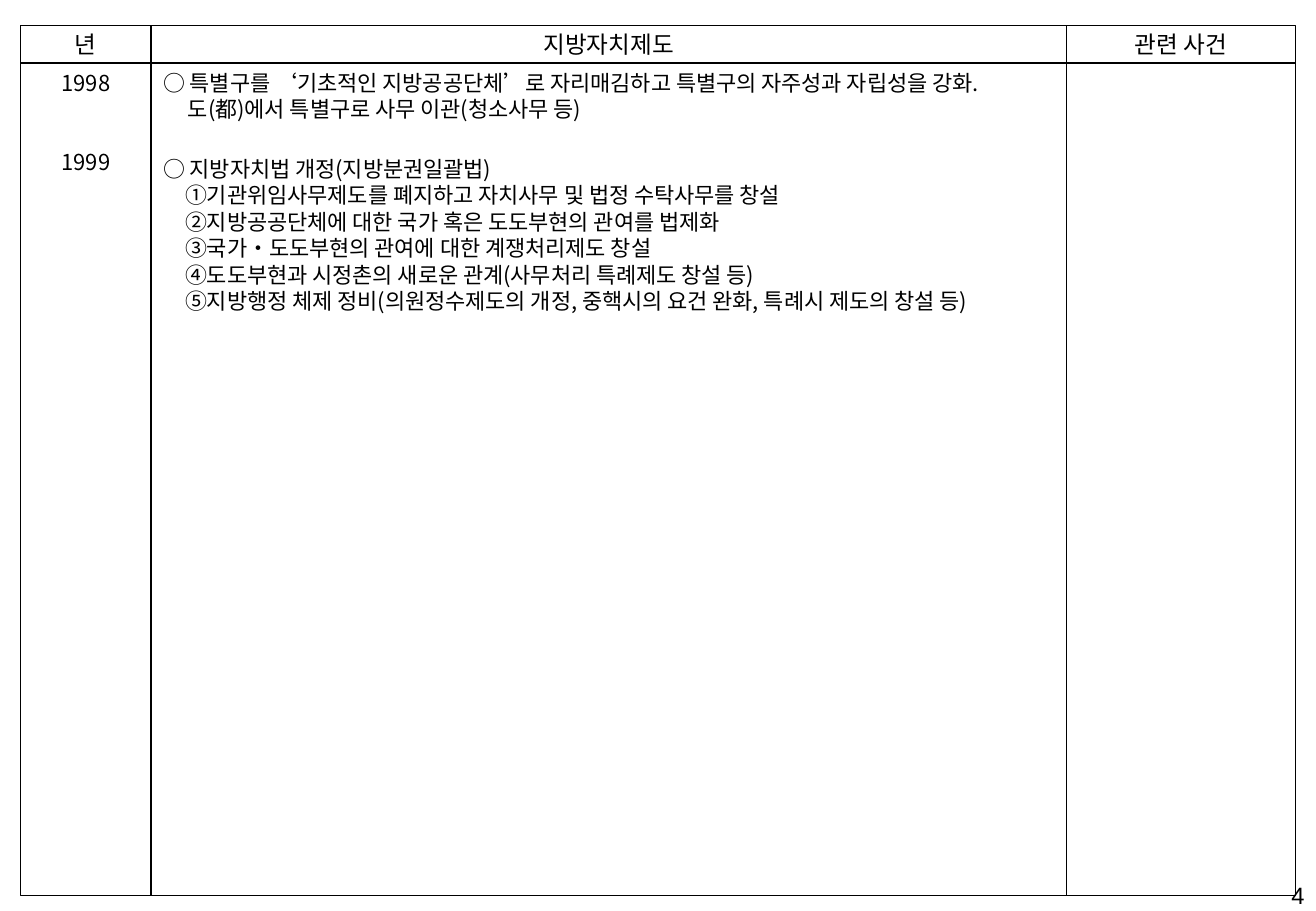
from lxml.etree import SubElement
from pptx import Presentation
from pptx.dml.color import RGBColor
from pptx.enum.shapes import MSO_SHAPE
from pptx.enum.text import MSO_ANCHOR, PP_ALIGN
from pptx.oxml.ns import qn
from pptx.util import Cm, Pt

NOTO = "Noto Sans CJK KR"
INK = "000000"
LEAD = 15.7
LEFT = 0.43
TOP, HEAD, BODY = 0.54, 0.78, 17.4

COLS = [
    (2.73, "년", "Calibri"),
    (19.13, "지방자치제도", "Calibri"),
    (4.8, "관련 사건", NOTO),
]
YEARS = [("1998", 0, 0), ("1999", 0, 2 * LEAD)]
WARDS = [
    ("○ 특별구를 ‘기초적인 지방공공단체’로 자리매김하고 특별구의 자주성과 자립성을 강화.", 0, 0),
    ("도(都)에서 특별구로 사무 이관(청소사무 등)", 0.52, 0),
]
REFORM = [("○ 지방자치법 개정(지방분권일괄법)", 0, 0)] + [
    (item, 0.46, 0)
    for item in (
        "①기관위임사무제도를 폐지하고 자치사무 및 법정 수탁사무를 창설",
        "②지방공공단체에 대한 국가 혹은 도도부현의 관여를 법제화",
        "③국가・도도부현의 관여에 대한 계쟁처리제도 창설",
        "④도도부현과 시정촌의 새로운 관계(사무처리 특례제도 창설 등)",
        "⑤지방행정 체제 정비(의원정수제도의 개정, 중핵시의 요건 완화, 특례시 제도의 창설 등)",
    )
]


def paint(target, code):
    """Set a solid colour from a hex string."""
    target.rgb = RGBColor.from_string(code)


def style(para, size, face, align):
    """Set the font and alignment of a paragraph."""
    para.alignment = align
    font = para.font
    font.size = Pt(size)
    font.name = face
    paint(font.color, INK)
    SubElement(font._rPr, qn("a:ea")).set("typeface", NOTO)


def label(shape, text, size, face, align):
    """Write one line, centred in height."""
    frame = shape.text_frame
    frame.word_wrap = True
    frame.vertical_anchor = MSO_ANCHOR.MIDDLE
    frame.text = text
    style(frame.paragraphs[0], size, face, align)


def prose(shape, lines, align=PP_ALIGN.LEFT):
    """Write lines given as text, indent in cm and gap above in points."""
    frame = shape.text_frame
    frame.word_wrap = True
    frame.vertical_anchor = MSO_ANCHOR.TOP
    for num, (text, indent, gap) in enumerate(lines):
        para = frame.add_paragraph() if num else frame.paragraphs[0]
        para.text = text
        para.line_spacing = Pt(LEAD)
        para.space_before = Pt(gap)
        style(para, 13, NOTO, align)
        para._p.get_or_add_pPr().set("marL", str(Cm(indent)))


def cell(slide, left, top, width, height):
    """Draw an outlined box without fill."""
    box = slide.shapes.add_shape(
        MSO_SHAPE.RECTANGLE, Cm(left), Cm(top), Cm(width), Cm(height)
    )
    box.shadow.inherit = False
    box.fill.background()
    paint(box.line.color, INK)
    box.line.width = Pt(0.75)
    return box


def note(slide, left, top, width, height):
    """Add a text box."""
    return slide.shapes.add_textbox(Cm(left), Cm(top), Cm(width), Cm(height))


def grid(slide):
    """Draw the columns with their headings and return the body boxes."""
    boxes = []
    left = LEFT
    for width, title, face in COLS:
        boxes.append(cell(slide, left, TOP + HEAD, width, BODY))
        head = cell(slide, left, TOP, width, HEAD)
        label(head, title, 14, face, PP_ALIGN.CENTER)
        left += width
    return boxes


def main():
    """Build and save the slide."""
    deck = Presentation()
    deck.slide_width, deck.slide_height = Cm(27.51), Cm(19.05)
    slide = deck.slides.add_slide(deck.slide_layouts[6])
    years, system, _ = grid(slide)
    prose(years, YEARS, PP_ALIGN.CENTER)
    prose(system, WARDS)
    prose(note(slide, LEFT + COLS[0][0], 3.12, 19.4, 10.4), REFORM)
    label(note(slide, 21.1, 18.39, 6.42, 0.66), "4", 14, "Arial", PP_ALIGN.RIGHT)
    deck.save("out.pptx")


if __name__ == "__main__":
    main()
